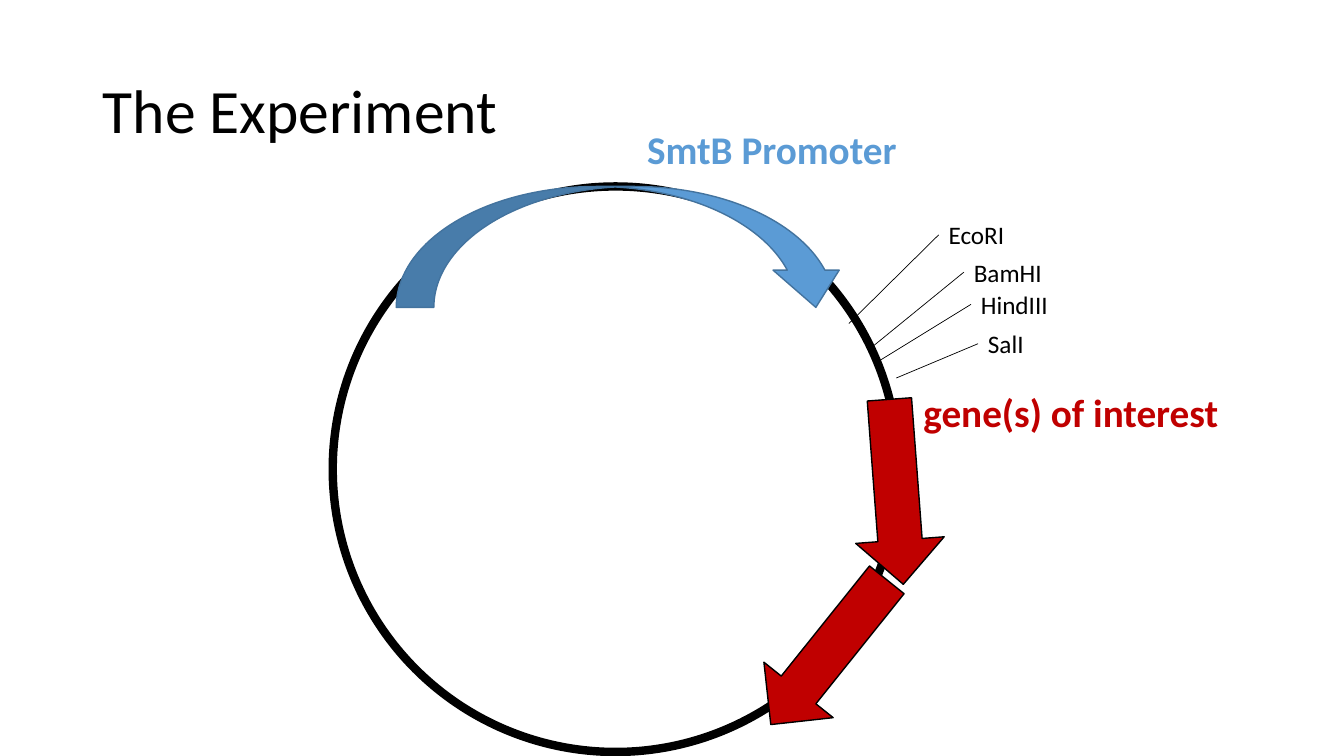
from dataclasses import dataclass

from lxml import etree
from pptx import Presentation
from pptx.dml.color import RGBColor
from pptx.enum.shapes import MSO_CONNECTOR, MSO_SHAPE
from pptx.enum.text import MSO_ANCHOR, MSO_AUTO_SIZE, PP_ALIGN
from pptx.oxml.ns import qn
from pptx.util import Inches, Pt

LEFT = PP_ALIGN.LEFT
MIDDLE = MSO_ANCHOR.MIDDLE
NO_FIT = MSO_AUTO_SIZE.NONE
GROW = MSO_AUTO_SIZE.SHAPE_TO_FIT_TEXT
STRAIGHT = MSO_CONNECTOR.STRAIGHT
OVAL = MSO_SHAPE.OVAL
RIGHT_ARROW = MSO_SHAPE.RIGHT_ARROW
CURVED_ARROW = MSO_SHAPE.CURVED_DOWN_ARROW
TITLE_ONLY = 5


@dataclass(frozen=True)
class Theme:
    font: str = "Calibri"
    ink: RGBColor = RGBColor(0x00, 0x00, 0x00)
    promoter: RGBColor = RGBColor(0x5B, 0x9B, 0xD5)
    promoter_edge: RGBColor = RGBColor(0x43, 0x73, 0x9E)
    gene: RGBColor = RGBColor(0xC0, 0x00, 0x00)
    title_size: int = 44
    feature_size: int = 28
    site_size: int = 18


THEME = Theme()

# Each site: name, label offset and cut point, all relative to the plasmid box
SITES = [
    ("EcoRI", (6.01, 0.28), (5.12, 1.36)),
    ("BamHI", (6.26, 0.65), (5.34, 1.6)),
    ("HindIII", (6.33, 0.97), (5.42, 1.73)),
    ("SalI", (6.4, 1.36), (5.59, 1.9)),
]
# Each gene: offset from the plasmid box, rotation
GENES = [((4.67, 2.59), 85.7), ((4, 4.18), 128.7)]


def inches(*lengths):
    return [Inches(length) for length in lengths]


def style_paragraph(paragraph, size, color, bold=False):
    paragraph.alignment = LEFT
    font = paragraph.font
    font.name, font.size, font.bold = THEME.font, Pt(size), bold
    font.color.rgb = color


def add_title(slide, text, box):
    title = slide.shapes.title
    title.left, title.top, title.width, title.height = inches(*box)
    frame = title.text_frame
    frame.text = text
    frame.auto_size = NO_FIT
    frame.vertical_anchor = MIDDLE
    frame.paragraphs[0].line_spacing = 0.9
    style_paragraph(frame.paragraphs[0], THEME.title_size, THEME.ink)


def add_label(slide, text, box, size, color, bold=False):
    frame = slide.shapes.add_textbox(*inches(*box)).text_frame
    frame.word_wrap = True
    frame.auto_size = GROW
    frame.text = text
    style_paragraph(frame.paragraphs[0], size, color, bold)


def add_outlined(slide, preset, box, edge, weight, fill=None):
    shape = slide.shapes.add_shape(preset, *inches(*box))
    shape.shadow.inherit = False
    if fill is None:
        shape.fill.background()
    else:
        shape.fill.solid()
        shape.fill.fore_color.rgb = fill
    shape.line.color.rgb = edge
    shape.line.width = Pt(weight)
    return shape


def add_leader(slide, start, end):
    leader = slide.shapes.add_connector(STRAIGHT, *inches(*start, *end))
    leader.line.color.rgb = THEME.ink
    leader.line.width = Pt(0.5)
    etree.SubElement(leader.element.spPr, qn("a:effectLst"))


def add_promoter(slide, left, top):
    arc = add_outlined(slide, CURVED_ARROW, (left + 0.63, top, 4.49, 1.2),
                       THEME.promoter_edge, 1, THEME.promoter)
    for index, value in enumerate((0.311, 0.547, 0.308)):
        arc.adjustments[index] = value
    add_label(slide, "SmtB Promoter", (left + 3.02, top - 0.66, 3.82, 0.57),
              THEME.feature_size, THEME.promoter, bold=True)


def add_genes(slide, left, top):
    for (dx, dy), angle in GENES:
        gene = add_outlined(slide, RIGHT_ARROW, (left + dx, top + dy, 1.84, 0.88),
                            THEME.ink, 1, THEME.gene)
        gene.rotation = angle
    add_label(slide, "gene(s) of interest", (left + 5.76, top + 1.95, 3.82, 0.57),
              THEME.feature_size, THEME.gene, bold=True)


def add_restriction_sites(slide, left, top):
    for name, (dx, dy), (cut_x, cut_y) in SITES:
        x, y = left + dx, top + dy
        add_label(slide, name, (x, y, 1.66, 0.4), THEME.site_size, THEME.ink)
        add_leader(slide, (x, y + 0.2), (left + cut_x, top + cut_y))


def add_plasmid(slide, left, top, diameter):
    """Draw the ring with its promoter, genes and restriction sites."""
    add_outlined(slide, OVAL, (left, top, diameter, diameter), THEME.ink, 6)
    add_promoter(slide, left, top)
    add_genes(slide, left, top)
    add_restriction_sites(slide, left, top)


def main():
    deck = Presentation()
    deck.slide_width, deck.slide_height = inches(13.33, 7.5)
    slide = deck.slides.add_slide(deck.slide_layouts[TITLE_ONLY])
    add_title(slide, "The Experiment", (0.92, 0.4, 11.5, 1.45))
    add_plasmid(slide, 3.3, 1.85, 5.61)
    deck.save("out.pptx")


if __name__ == "__main__":
    main()
